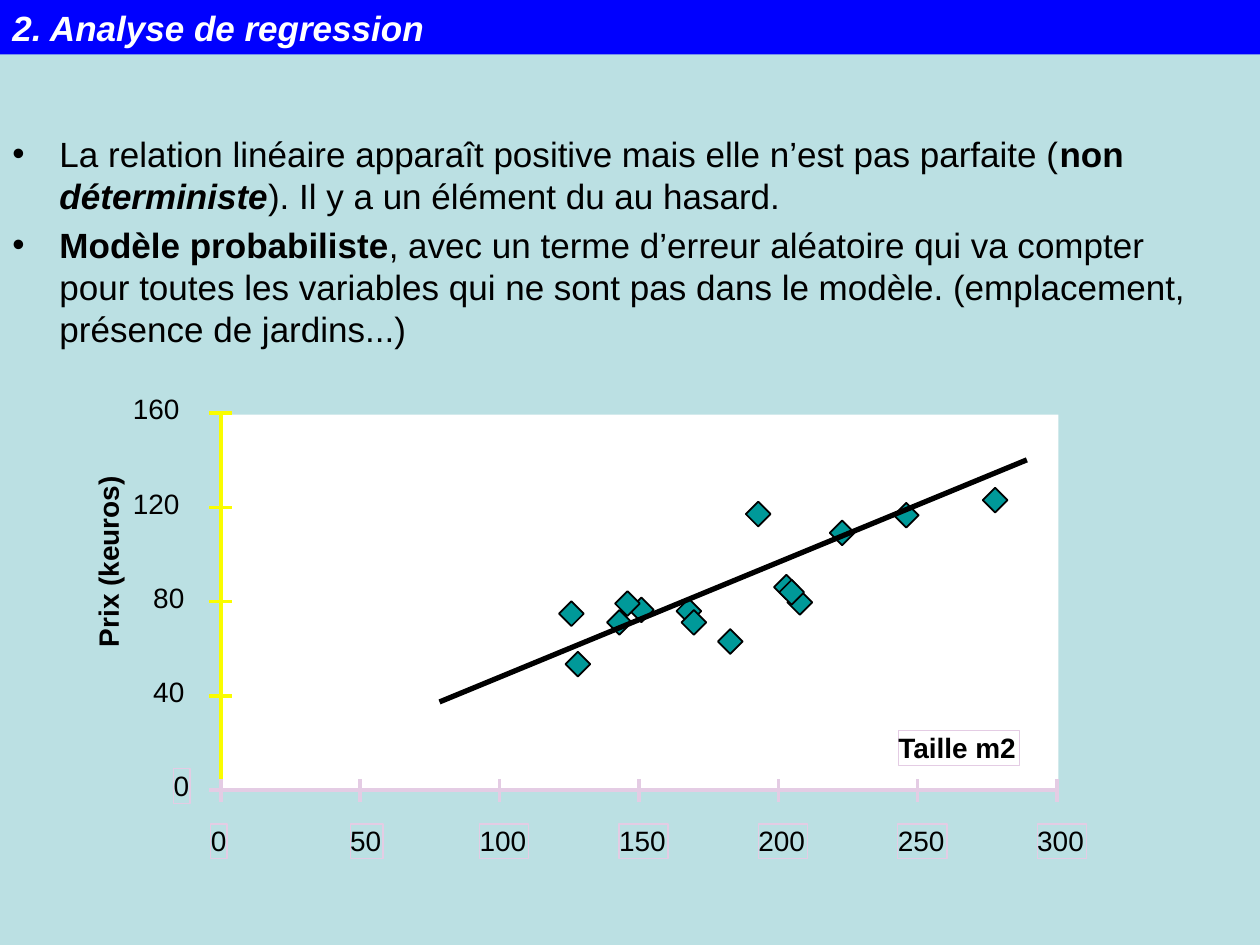
from lxml import etree
from pptx import Presentation
from pptx.dml.color import RGBColor
from pptx.enum.shapes import MSO_CONNECTOR, MSO_SHAPE
from pptx.enum.text import MSO_ANCHOR, MSO_AUTO_SIZE, PP_ALIGN
from pptx.oxml.ns import qn
from pptx.util import Cm, Pt

BLACK = RGBColor(0x00, 0x00, 0x00)
WHITE = RGBColor(0xFF, 0xFF, 0xFF)
BLUE = RGBColor(0x00, 0x00, 0xFF)
SKY = RGBColor(0xBB, 0xE0, 0xE3)
TEAL = RGBColor(0x00, 0x99, 0x99)
PINK = RGBColor(0xE4, 0xCC, 0xE4)
YELLOW = RGBColor(0xFA, 0xFD, 0x00)

# Plot frame in cm: origin, and the gap between ticks
LEFT, BASE = 4.45, 15.93
COL, ROW = 2.81, 1.9
XSTEP, YSTEP = 50, 40
TICK = 0.23
DIGIT = 0.33

deck = Presentation()
deck.slide_width, deck.slide_height = Cm(25.4), Cm(19.05)
slide = deck.slides.add_slide(deck.slide_layouts[6])
slide.background.fill.solid()
slide.background.fill.fore_color.rgb = SKY
shapes = slide.shapes


def add_line(x1, y1, x2, y2, color, width=0):
    line = shapes.add_connector(MSO_CONNECTOR.STRAIGHT, Cm(x1), Cm(y1), Cm(x2), Cm(y2))
    line.line.color.rgb = color
    line.line.width = Pt(width)
    etree.SubElement(line._element.spPr, qn("a:effectLst"))


def add_label(text, x, y, width, boxed=False, bold=False):
    place = Cm(x), Cm(y), Cm(width), Cm(0.7)
    if boxed:
        label = shapes.add_shape(MSO_SHAPE.RECTANGLE, *place)
        label.shadow.inherit = False
        label.fill.background()
        label.line.color.rgb = PINK
        label.line.width = Pt(0.75)
    else:
        label = shapes.add_textbox(*place)
    frame = label.text_frame
    look = {"margin_left": 0, "margin_right": 0, "margin_top": 0, "margin_bottom": 0,
            "word_wrap": False, "vertical_anchor": MSO_ANCHOR.TOP,
            "auto_size": MSO_AUTO_SIZE.SHAPE_TO_FIT_TEXT}
    for name, value in look.items():
        setattr(frame, name, value)
    para = frame.paragraphs[0]
    para.alignment = PP_ALIGN.LEFT
    run = para.add_run()
    run.text = text
    for name, value in {"name": "Arial", "size": Pt(16), "bold": bold}.items():
        setattr(run.font, name, value)
    run.font.color.rgb = BLACK
    return label


# Plot area
plot = shapes.add_shape(MSO_SHAPE.RECTANGLE, Cm(4.5), Cm(8.36), Cm(16.84), Cm(7.59))
plot.shadow.inherit = False
plot.fill.solid()
plot.fill.fore_color.rgb = WHITE
plot.line.fill.background()

# Axes and ticks
add_line(LEFT, BASE - 4 * ROW, LEFT, BASE, YELLOW)
for i in range(5):
    y = BASE - i * ROW
    add_line(LEFT - TICK, y, LEFT + TICK, y, YELLOW if i else PINK)
add_line(LEFT, BASE, LEFT + 6 * COL, BASE, PINK)
for i in range(7):
    x = LEFT + i * COL
    add_line(x, BASE + TICK, x, BASE - TICK, PINK)

# Houses: size in m2, price in keuros
houses = [(202.9, 86.2), (150.9, 76.5), (207.7, 79.7), (128.1, 53.5), (182.8, 63.1),
          (145.9, 79.2), (277.8, 123.1), (167.9, 76), (245.9, 116.7), (204.8, 84),
          (222.9, 109.2), (192.8, 117.2), (125.8, 74.9), (143, 71.2), (169.7, 71.2)]
SIDE = 0.5
for size, price in houses:
    x = LEFT + size / XSTEP * COL
    y = BASE - price / YSTEP * ROW
    mark = shapes.add_shape(MSO_SHAPE.DIAMOND, Cm(x - SIDE / 2), Cm(y - SIDE / 2),
                            Cm(SIDE), Cm(SIDE))
    mark.shadow.inherit = False
    mark.fill.solid()
    mark.fill.fore_color.rgb = TEAL
    mark.line.color.rgb = BLACK
    mark.line.width = Pt(1)

# Axis values
for i in range(5):
    text = str(i * YSTEP)
    add_label(text, 3.91 - 0.41 * len(text), BASE - i * ROW - 0.43,
              DIGIT * len(text), boxed=i == 0)
for i in range(7):
    text = str(i * XSTEP)
    shift = 0.4 if len(text) == 3 else 0.2
    add_label(text, LEFT + i * COL - shift, 16.61, DIGIT * len(text), boxed=True)

# Axis titles
add_label("Taille m2", 18.11, 14.73, 2.44, boxed=True, bold=True)
add_label("Prix (keuros)", 0.46, 10.97, 3.45, bold=True).rotation = 270

# Trend line
add_line(8.86, 14.15, 20.7, 9.27, BLACK, 3)

# Bullet points: text, bold, italic
points = [
    [("La relation linéaire apparaît positive mais elle n’est pas parfaite (", False, False),
     ("non ", True, False), ("déterministe", True, True),
     ("). Il y a un élément du au hasard.", False, False)],
    [("Modèle probabiliste", True, False),
     (", avec un terme d’erreur aléatoire qui va compter pour toutes les variables "
      "qui ne sont pas dans le modèle. (emplacement, présence de jardins...)", False, False)],
]
body = shapes.add_textbox(0, Cm(2.54), Cm(24.77), Cm(5.08)).text_frame
body.word_wrap = True
for i, point in enumerate(points):
    para = body.add_paragraph() if i else body.paragraphs[0]
    para.space_before = Pt(4)
    props = para._p.get_or_add_pPr()
    props.set("marL", str(Cm(0.95)))
    props.set("indent", str(Cm(-0.95)))
    etree.SubElement(props, qn("a:buFont")).set("typeface", "Arial")
    etree.SubElement(props, qn("a:buChar")).set("char", "•")
    for text, bold, slant in point:
        run = para.add_run()
        run.text = text
        look = {"name": "Arial", "size": Pt(20), "bold": bold, "italic": slant}
        for name, value in look.items():
            setattr(run.font, name, value)
        run.font.color.rgb = BLACK

# Title bar
bar = shapes.add_shape(MSO_SHAPE.RECTANGLE, 0, 0, Cm(25.4), Cm(1.1))
bar.shadow.inherit = False
bar.fill.solid()
bar.fill.fore_color.rgb = BLUE
bar.line.fill.background()
bar.text_frame.vertical_anchor = MSO_ANCHOR.TOP
bar.text_frame.auto_size = MSO_AUTO_SIZE.SHAPE_TO_FIT_TEXT
para = bar.text_frame.paragraphs[0]
para.alignment = PP_ALIGN.LEFT
run = para.add_run()
run.text = "2. Analyse de regression"
look = {"name": "Arial", "size": Pt(20), "bold": True, "italic": True}
for name, value in look.items():
    setattr(run.font, name, value)
run.font.color.rgb = WHITE

deck.save("out.pptx")
